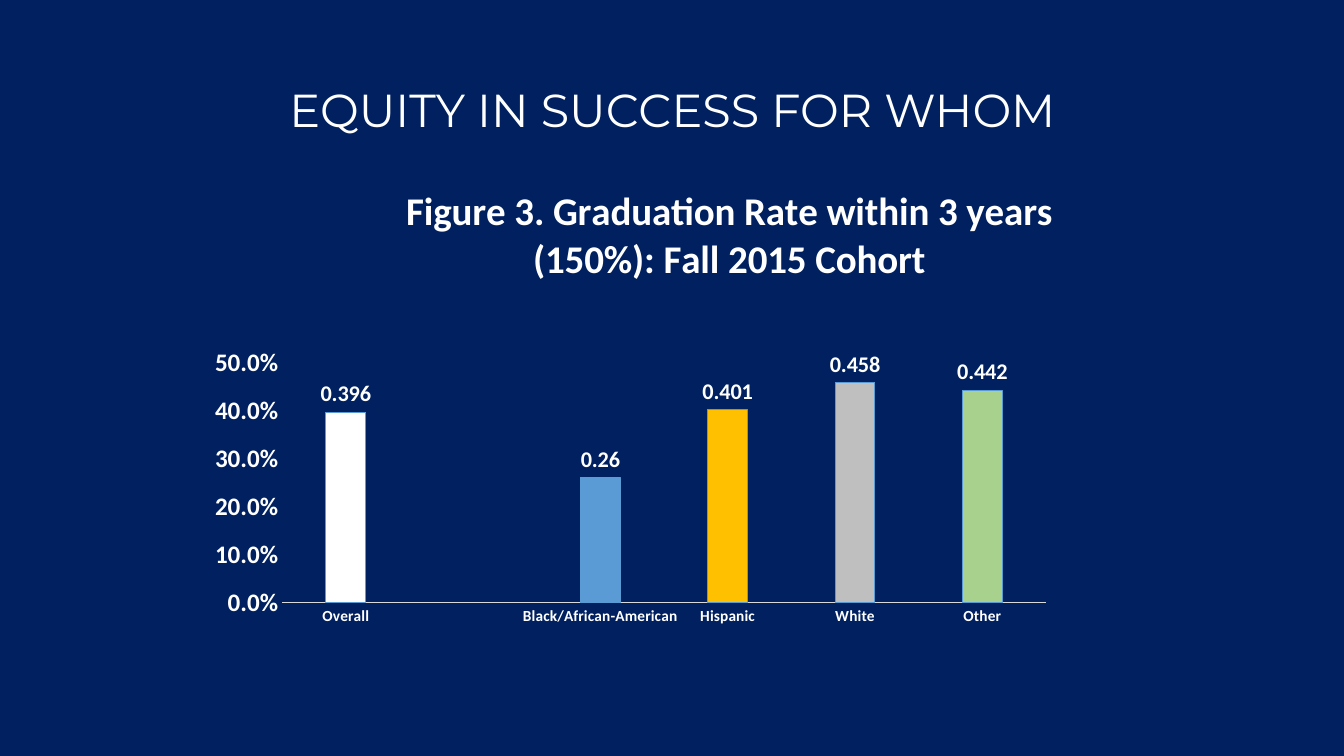
"""Build the graduation rate slide with its column chart."""
from dataclasses import dataclass
from typing import Any, NamedTuple, Optional

from lxml.etree import SubElement
from pptx import Presentation
from pptx.chart.chart import Chart
from pptx.chart.data import CategoryChartData
from pptx.dml.color import RGBColor
from pptx.enum.chart import XL_CHART_TYPE as ChartType
from pptx.enum.chart import XL_LABEL_POSITION as LabelPosition
from pptx.enum.chart import XL_TICK_MARK as TickMark
from pptx.enum.text import MSO_ANCHOR as Anchor
from pptx.enum.text import PP_ALIGN as Align
from pptx.oxml.ns import qn
from pptx.slide import Slide
from pptx.util import Emu, Pt


@dataclass(frozen=True)
class Theme:
    background: str = "002060"
    text: str = "FFFFFF"
    chart_text: str = "000000"
    accent: str = "5B9BD5"
    axis_line: str = "D9D9D9"
    heading_font: str = "Montserrat"
    body_font: str = "Calibri"
    heading_size: int = 33
    chart_title_size: int = 28
    value_axis_size: int = 18
    label_size: int = 16
    category_size: int = 11
    chart_size: int = 10
    line_width: float = 0.75


class Box(NamedTuple):
    left: int
    top: int
    width: int
    height: int


class Column(NamedTuple):
    category: str
    rate: Optional[float]
    color: Optional[str] = None


THEME = Theme()
PX_PER_INCH = 100.8
SLIDE_SIZE = (1344, 756)
TITLE_BOX = Box(93, 40, 1159, 146)
CHART_BOX = Box(215, 155, 903, 560)
TITLE_LAYOUT = {"xMode": "edge", "yMode": "edge", "x": 0.2, "y": 0.04}
PLOT_LAYOUT = {
    "layoutTarget": "inner", "xMode": "edge", "yMode": "edge",
    "x": 0.07, "y": 0.37, "w": 0.85, "h": 0.43,
}
COLUMNS = [
    Column("Overall", 0.396, "FFFFFF"),
    Column("", None),
    Column("Black/African-American", 0.26),
    Column("Hispanic", 0.401, "FFC000"),
    Column("White", 0.458, "BFBFBF"),
    Column("Other", 0.442, "A9D18E"),
]


def px(length: int) -> Emu:
    """Turn whole pixels into EMU."""
    return Emu(round(length * 914400 / PX_PER_INCH))


def apply_format(target: Any, values: dict[str, Any]) -> None:
    """Set each named attribute on the target."""
    for name, value in values.items():
        setattr(target, name, value)


def style_font(font: Any, size: int, color: str = THEME.text,
               name: str = THEME.body_font, bold: bool = True) -> None:
    """Give a font its face, size, weight and colour."""
    apply_format(font, {"name": name, "size": Pt(size), "bold": bold})
    font.color.rgb = RGBColor.from_string(color)


def paint(fill: Any, color: str) -> None:
    """Fill with one solid colour."""
    fill.solid()
    fill.fore_color.rgb = RGBColor.from_string(color)


def outline(line: Any, color: str) -> None:
    """Draw a thin line in one colour."""
    line.width = Pt(THEME.line_width)
    line.color.rgb = RGBColor.from_string(color)


def set_layout(parent: Any, index: int, values: dict[str, Any]) -> None:
    """Place a chart part by fractions of the chart area."""
    for old_layout in parent.findall(qn("c:layout")):
        parent.remove(old_layout)
    layout = parent.makeelement(qn("c:layout"))
    parent.insert(index, layout)
    manual = SubElement(layout, qn("c:manualLayout"))
    for name, value in values.items():
        SubElement(manual, qn(f"c:{name}")).set("val", str(value))


def add_heading(slide: Slide) -> None:
    """Write the slide title in its placeholder."""
    title = slide.shapes.title
    apply_format(title, {name: px(value) for name, value in TITLE_BOX._asdict().items()})
    title.text_frame.text = "EQUITY IN SUCCESS FOR WHOM"
    title.text_frame.vertical_anchor = Anchor.MIDDLE
    paragraph = title.text_frame.paragraphs[0]
    apply_format(paragraph, {"alignment": Align.CENTER, "line_spacing": 0.9})
    style_font(paragraph.runs[0].font, THEME.heading_size,
               name=THEME.heading_font, bold=False)


def style_chart_title(chart: Chart) -> None:
    """Write and place the chart title."""
    chart.has_title = True
    frame = chart.chart_title.text_frame
    frame.text = "Figure 3. Graduation Rate within 3 years (150%): Fall 2015 Cohort"
    frame.paragraphs[0].alignment = Align.CENTER
    style_font(frame.paragraphs[0].runs[0].font, THEME.chart_title_size)
    set_layout(chart._chartSpace.chart.find(qn("c:title")), 1, TITLE_LAYOUT)


def style_axes(chart: Chart) -> None:
    """Format the category and value axes."""
    sizes = ((chart.category_axis, THEME.category_size),
             (chart.value_axis, THEME.value_axis_size))
    for axis, size in sizes:
        apply_format(axis, {
            "has_major_gridlines": False,
            "major_tick_mark": TickMark.NONE,
            "minor_tick_mark": TickMark.NONE,
        })
        style_font(axis.tick_labels.font, size)
        axis._element.find(f"{qn('c:txPr')}/{qn('a:bodyPr')}").set("rot", "-60000000")
    outline(chart.category_axis.format.line, THEME.axis_line)
    apply_format(chart.value_axis, {
        "minimum_scale": 0, "maximum_scale": 0.5, "major_unit": 0.1,
    })
    apply_format(chart.value_axis.tick_labels, {
        "number_format": "0.0%", "number_format_is_linked": False,
    })
    chart.value_axis.format.line.fill.background()


def style_columns(chart: Chart) -> None:
    """Colour the columns and label their values."""
    plot = chart.plots[0]
    apply_format(plot, {"gap_width": 219, "overlap": -27, "vary_by_categories": False})
    series = plot.series[0]
    series.invert_if_negative = False
    paint(series.format.fill, THEME.accent)
    outline(series.format.line, THEME.accent)
    for index, column in enumerate(COLUMNS):
        if column.color:
            point_format = series.points[index].format
            paint(point_format.fill, column.color)
            outline(point_format.line, THEME.accent)
    labels = series.data_labels
    apply_format(labels, {
        "show_value": True, "position": LabelPosition.OUTSIDE_END,
        "number_format": "General", "number_format_is_linked": False,
    })
    style_font(labels.font, THEME.label_size)


def add_rate_chart(slide: Slide) -> None:
    """Add the graduation rate chart."""
    data = CategoryChartData()
    data.categories = [column.category for column in COLUMNS]
    data.add_series("Series 1", [column.rate for column in COLUMNS])
    frame = slide.shapes.add_chart(ChartType.COLUMN_CLUSTERED, *map(px, CHART_BOX), data)
    chart = frame.chart
    chart.has_legend = False
    style_font(chart.font, THEME.chart_size, THEME.chart_text, bold=False)
    style_chart_title(chart)
    style_axes(chart)
    style_columns(chart)
    set_layout(chart._chartSpace.chart.plotArea, 0, PLOT_LAYOUT)


def main() -> None:
    """Create and save the presentation."""
    presentation = Presentation()
    presentation.slide_width, presentation.slide_height = map(px, SLIDE_SIZE)
    slide = presentation.slides.add_slide(presentation.slide_layouts[5])
    paint(slide.background.fill, THEME.background)
    add_heading(slide)
    add_rate_chart(slide)
    presentation.save("out.pptx")


if __name__ == "__main__":
    main()
